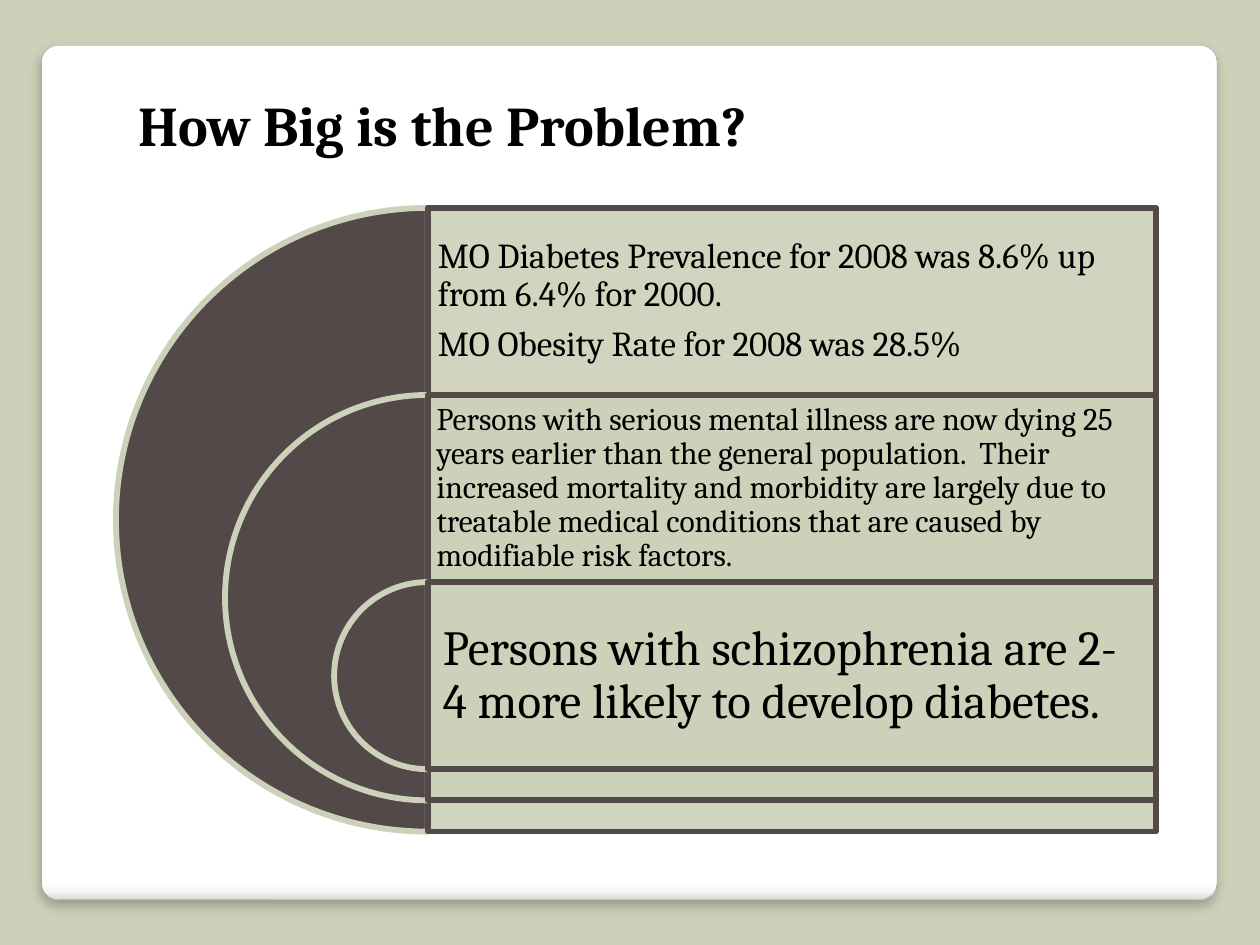
from lxml import etree
from pptx import Presentation
from pptx.dml.color import RGBColor
from pptx.enum.shapes import MSO_SHAPE
from pptx.enum.text import MSO_ANCHOR
from pptx.oxml.ns import qn
from pptx.util import Inches, Pt

PIE = MSO_SHAPE.PIE
RECTANGLE = MSO_SHAPE.RECTANGLE
ROUNDED = MSO_SHAPE.ROUNDED_RECTANGLE
TOP = MSO_ANCHOR.TOP
MIDDLE = MSO_ANCHOR.MIDDLE

THEME = {
    "font": "Cambria",
    "sage": "CCD1B9",
    "brown": "534949",
    "ink": "000000",
    "card_line": "A4A4A4",
    "card_stops": [(0, "FFFFFF"), (98, "FFFFFF"), (99, "F7F7F7"), (100, "DADADA")],
    "title_size": 32,
    "outline": 3.35,
}

BANDS = [
    (20, 0.8, [
        "MO Diabetes Prevalence for 2008 was 8.6% up from 6.4% for 2000.",
        "MO Obesity Rate for 2008 was 28.5%",
    ]),
    (18, 0.7, [
        "Persons with serious mental illness are now dying 25 years earlier than the "
        "general population.  Their increased mortality and morbidity are largely due "
        "to treatable medical conditions that are caused by modifiable risk factors.",
    ]),
    (28, 1.2, ["Persons with schizophrenia are 2-4 more likely to develop diabetes."]),
]

deck = Presentation()
deck.slide_width = Inches(10)
deck.slide_height = Inches(7.5)
column = deck.slide_width / 100
row = deck.slide_height / 100
page = deck.slides.add_slide(deck.slide_layouts[6])
page.background.fill.solid()
page.background.fill.fore_color.rgb = RGBColor.from_string(THEME["sage"])


def add_shape(shapes, kind, left, top, width, height, line, weight, fill=None):
    shape = shapes.add_shape(
        kind, int(left * column), int(top * row), int(width * column), int(height * row))
    shape.shadow.inherit = False
    if fill:
        shape.fill.solid()
        shape.fill.fore_color.rgb = RGBColor.from_string(fill)
    shape.line.color.rgb = RGBColor.from_string(line)
    shape.line.width = Pt(weight)
    etree.SubElement(shape.line._get_or_add_ln(), qn("a:round"))
    return shape


def add_text(shapes, lines, left, top, width, height, size, bold=False,
             inset=1, inset_top=0.5, anchor=TOP, spacing=1, after=0):
    box = shapes.add_textbox(
        int(left * column), int(top * row), int(width * column), int(height * row))
    frame = box.text_frame
    frame.word_wrap = True
    frame.vertical_anchor = anchor
    frame.margin_left = frame.margin_right = int(inset * column)
    frame.margin_top = frame.margin_bottom = int(inset_top * column)
    for index, line in enumerate(lines):
        para = frame.add_paragraph() if index else frame.paragraphs[0]
        para.line_spacing = spacing
        para.space_after = Pt(after)
        span = para.add_run()
        span.text = line
        span.font.name = THEME["font"]
        span.font.size = Pt(size)
        span.font.bold = bold
        span.font.color.rgb = RGBColor.from_string(THEME["ink"])


card = add_shape(page.shapes, ROUNDED, 3.3, 4.8, 93.3, 90.4, THEME["card_line"], 0.16)
card.adjustments[0] = 0.02
card.fill.gradient()
card.fill.gradient_angle = 270
properties = card._element.spPr
stops = properties.find(qn("a:gradFill")).find(qn("a:gsLst"))
for stop in list(stops):
    stops.remove(stop)
for position, color in THEME["card_stops"]:
    stop = etree.SubElement(stops, qn("a:gs"), pos=str(position * 1000))
    etree.SubElement(stop, qn("a:srgbClr"), val=color)
shadow = etree.SubElement(
    properties.find(qn("a:effectLst")), qn("a:outerShdw"), blurRad=str(Pt(6)),
    dist=str(Pt(4)), dir="5400000", algn="tl", rotWithShape="0")
shade = etree.SubElement(shadow, qn("a:srgbClr"), val=THEME["ink"])
etree.SubElement(shade, qn("a:alpha"), val="25000")

add_text(page.shapes, ["How Big is the Problem?"], 10, 8.9, 82, 16.7,
         THEME["title_size"], bold=True)

diagram = page.shapes.add_group_shape().shapes
center = 33.95
band_width = 57.8
band_height = 19.8
shrink = 23.1
for index, (size, inset, lines) in enumerate(BANDS):
    top = 22 + index * band_height
    height = 66 - index * shrink
    diameter = height * row / column
    half = add_shape(diagram, PIE, center - diameter / 2, top, diameter, height,
                     THEME["sage"], THEME["outline"], THEME["brown"])
    half.adjustments[0] = 54
    half.adjustments[1] = 162
    panel = add_shape(diagram, RECTANGLE, center, top, band_width, height,
                      THEME["brown"], THEME["outline"], THEME["sage"])
    tint = panel._element.spPr.find(qn("a:solidFill"))[0]
    etree.SubElement(tint, qn("a:alpha"), val="90000")
    add_text(diagram, lines, center, top, band_width, band_height, size, inset=inset,
             inset_top=inset, anchor=MIDDLE, spacing=0.9, after=size * 0.35)

deck.save("out.pptx")
